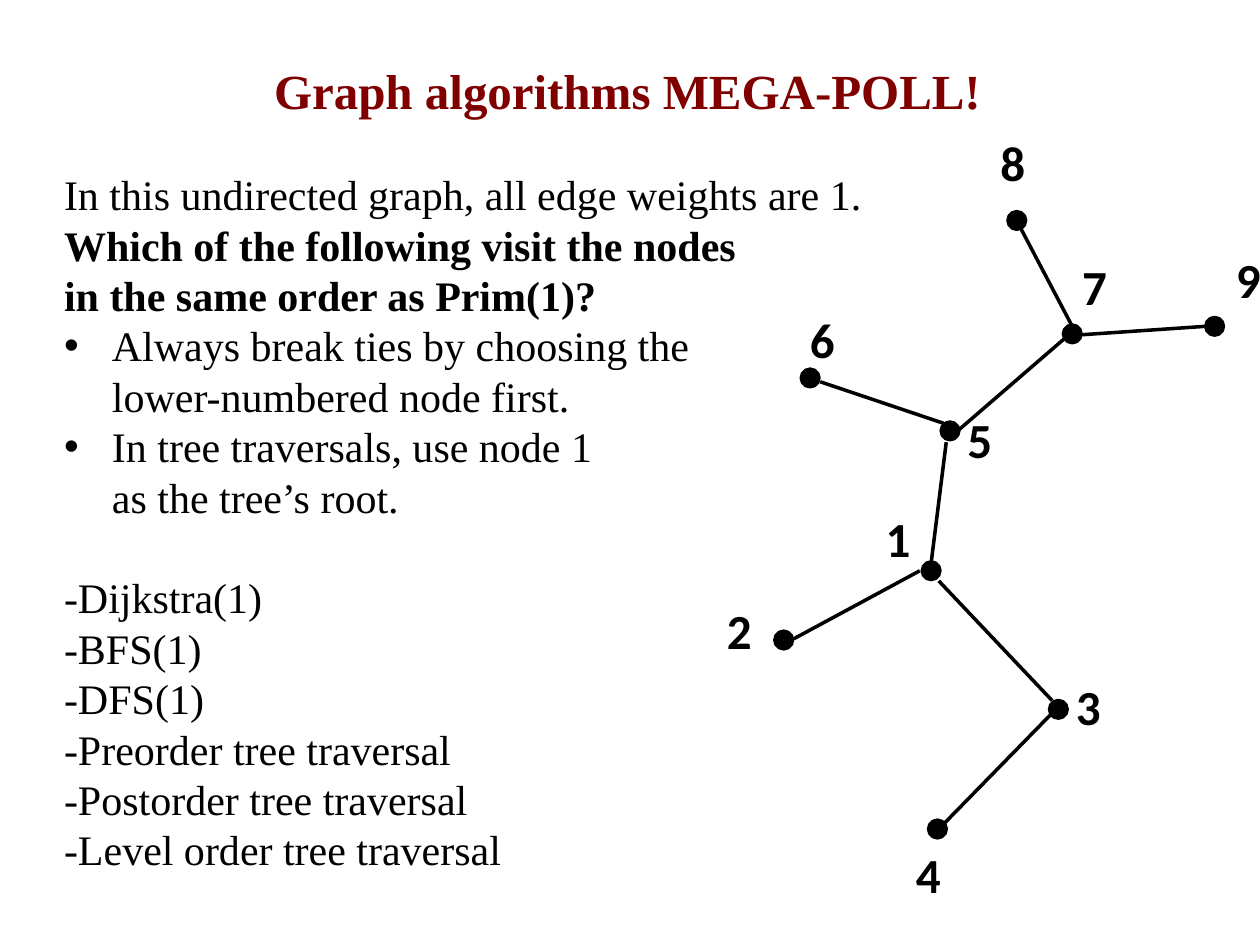
import pptx
import pptx.util
import pptx.dml.color
import pptx.enum.shapes
import pptx.enum.text
import pptx.oxml.ns
import lxml.etree

BLACK = pptx.dml.color.RGBColor(0, 0, 0)
MAROON = pptx.dml.color.RGBColor(0x80, 0, 0)
SERIF = "Times New Roman"
SANS = "Calibri"
COLS, ROWS = 100, 75

# Node: dot centre, then label corner, in columns and rows
NODES = {
    1: (73.9, 45.3, 69.3, 39.9),
    2: (62.2, 50.8, 56.7, 47.2),
    3: (84, 56.3, 84.4, 53.2),
    4: (74.4, 65.8, 71.7, 66.5),
    5: (75.4, 34.2, 75.8, 32),
    6: (64.3, 30, 63.3, 24.1),
    7: (85.1, 26.5, 84.9, 19.9),
    8: (80.7, 17.5, 78.4, 10),
    9: (96.4, 25.9, 97.1, 19.3),
}
# Edge ends, which stop at the rims of the dots
EDGES = [
    (63, 50.7, 73, 45.3),
    (74.5, 46.1, 83.5, 55.6),
    (74.7, 65.6, 83.5, 56.6),
    (65.1, 30.3, 74.9, 33.6),
    (73.9, 44.7, 75.1, 35.1),
    (76, 34.2, 84.8, 26.6),
    (85.4, 26.6, 95.7, 25.9),
    (81, 18.1, 85.1, 25.9),
]
# Body lines, each with its own format
BODY = [
    ("In this undirected graph, all edge weights are 1.", {}),
    ("Which of the following visit the nodes", {"bold": True}),
    ("in the same order as Prim(1)?", {"bold": True}),
    ("Always break ties by choosing the \nlower-numbered node first.", {"bullet": True}),
    ("In tree traversals, use node 1 \nas the tree’s root.", {"bullet": True}),
    ("-Dijkstra(1)", {"before": 28.8}),
    ("-BFS(1)", {}),
    ("-DFS(1)", {}),
    ("-Preorder tree traversal", {}),
    ("-Postorder tree traversal", {}),
    ("-Level order tree traversal", {}),
]


def write(para, text, size=24, font=SERIF, color=BLACK, bold=False,
          align=None, lead=None, before=0, bullet=False):
    para.text = text
    para.alignment = align
    para.space_before = pptx.util.Pt(before)
    if lead:
        para.line_spacing = pptx.util.Pt(lead)
    for run in para.runs:
        run.font.size = pptx.util.Pt(size)
        run.font.name = font
        run.font.bold = bold
        run.font.color.rgb = color
    if bullet:
        props = para._p.get_or_add_pPr()
        inset = pptx.util.Inches(0.38)
        props.set("marL", str(inset))
        props.set("indent", str(-inset))
        qn = pptx.oxml.ns.qn
        lxml.etree.SubElement(props, qn("a:buFont")).set("typeface", "Arial")
        lxml.etree.SubElement(props, qn("a:buChar")).set("char", "•")


class Deck:
    def __init__(self):
        self.file = pptx.Presentation()
        self.file.slide_width = pptx.util.Inches(10)
        self.file.slide_height = pptx.util.Inches(7.5)
        self.slide = self.file.slides.add_slide(self.file.slide_layouts[5])
        self.shapes = self.slide.shapes

    def place(self, x, y, w, h):
        col = self.file.slide_width / COLS
        row = self.file.slide_height / ROWS
        return [round(v) for v in (x * col, y * row, w * col, h * row)]

    def title(self, text, *box):
        shape = self.slide.shapes.title
        shape.left, shape.top, shape.width, shape.height = self.place(*box)
        frame = shape.text_frame
        frame.vertical_anchor = pptx.enum.text.MSO_ANCHOR.MIDDLE
        frame.margin_left = frame.margin_top = frame.margin_bottom = pptx.util.Inches(0.06)
        write(frame.paragraphs[0], text, size=28, color=MAROON, bold=True,
              align=pptx.enum.text.PP_ALIGN.CENTER)

    def text(self, lines, *box, wrap=True, **style):
        frame = self.shapes.add_textbox(*self.place(*box)).text_frame
        frame.word_wrap = wrap
        for i, (line, extra) in enumerate(lines):
            para = frame.add_paragraph() if i else frame.paragraphs[0]
            write(para, line, **style, **extra)

    def dot(self, x, y, size=1.4):
        shape = self.shapes.add_shape(
            pptx.enum.shapes.MSO_SHAPE.OVAL,
            *self.place(x - size / 2, y - size / 2, size, size))
        shape.shadow.inherit = False
        shape.fill.solid()
        shape.fill.fore_color.rgb = BLACK
        self.ink(shape.line)

    def edge(self, *ends):
        link = self.shapes.add_connector(
            pptx.enum.shapes.MSO_CONNECTOR.STRAIGHT, *self.place(*ends))
        self.ink(link.line)
        lxml.etree.SubElement(link._element.spPr, pptx.oxml.ns.qn("a:effectLst"))

    def ink(self, line):
        line.color.rgb = BLACK
        line.width = pptx.util.Pt(2)

    def graph(self):
        self.shapes = self.slide.shapes.add_group_shape().shapes
        for ends in EDGES:
            self.edge(*ends)
        for name, (x, y, left, top) in NODES.items():
            self.dot(x, y)
            self.text([(str(name), {})], left, top, 4.8, 5.7,
                      size=28, font=SANS, bold=True)
        self.shapes = self.slide.shapes


def main():
    deck = Deck()
    # Heading
    deck.title("Graph algorithms MEGA-POLL!", 7.5, 4.2, 85, 5.8)
    # Tree of nodes
    deck.graph()
    # Question and choices
    deck.text(BODY, 4.1, 12.9, 65.9, 57.6, wrap=False, lead=28.8)
    deck.file.save("out.pptx")


if __name__ == "__main__":
    main()
